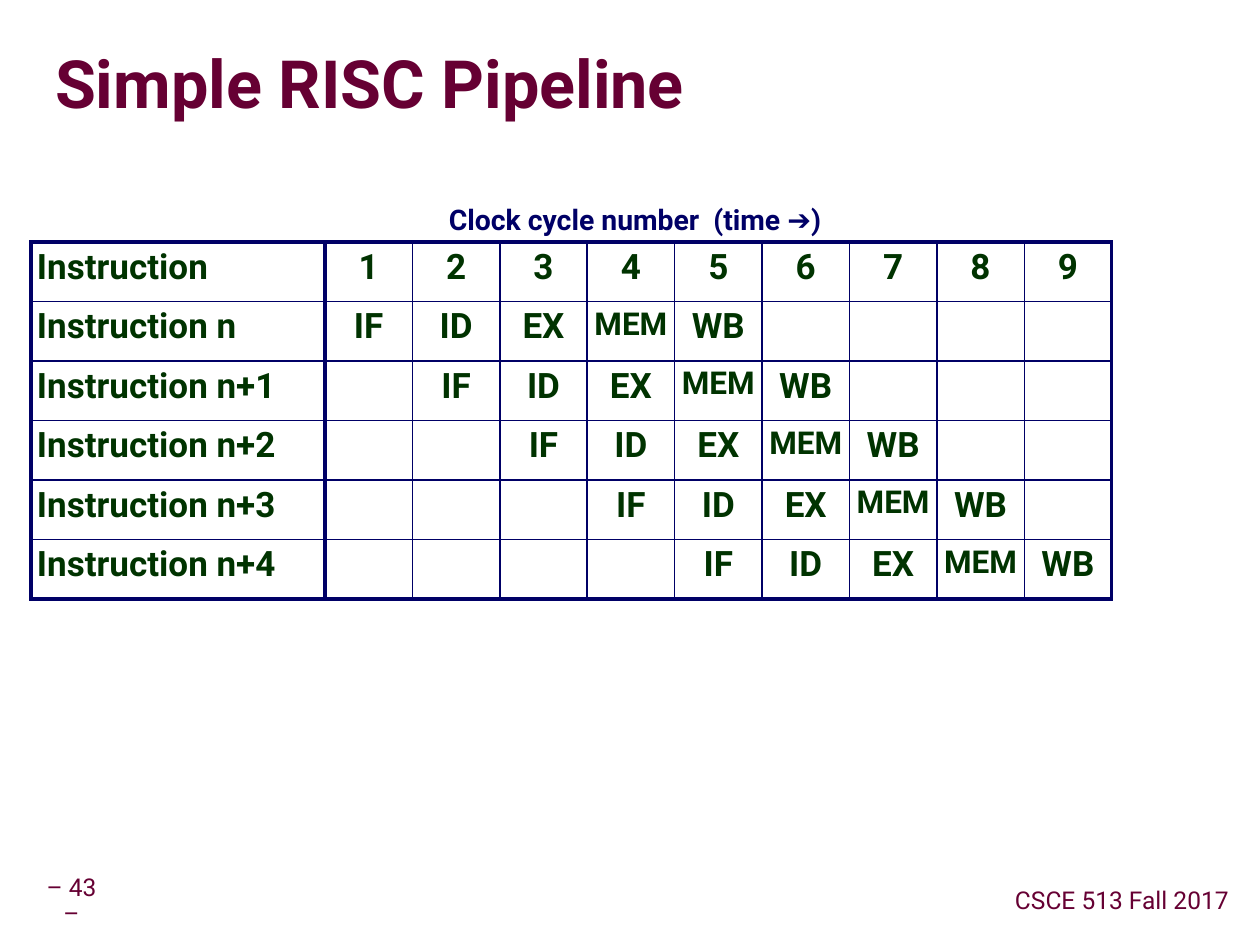
from lxml import etree
from pptx import Presentation
from pptx.dml.color import RGBColor
from pptx.enum.text import MSO_ANCHOR, MSO_AUTO_SIZE, PP_ALIGN
from pptx.oxml import parse_xml
from pptx.oxml.ns import nsdecls, qn
from pptx.util import Pt

LEFT, CENTER = PP_ALIGN.LEFT, PP_ALIGN.CENTER
TOP, MIDDLE = MSO_ANCHOR.TOP, MSO_ANCHOR.MIDDLE
GROW, FIXED = MSO_AUTO_SIZE.SHAPE_TO_FIT_TEXT, MSO_AUTO_SIZE.NONE

EMU_PER_PX = 914400 / 126
COLORS = {"plum": "660033", "navy": "000066", "green": "003300", "shadow": "969696"}
FONT = "Roboto"
INSET = 6
THIN, THICK = 1, 2.25

STAGES = ["IF", "ID", "EX", "MEM", "WB"]
CYCLES = 9
INSTRUCTIONS = ["Instruction n"] + [f"Instruction n+{i}" for i in range(1, 5)]


def px(length):
    return round(length * EMU_PER_PX)


class SlideBuilder:
    def __init__(self, deck):
        self.page = deck.slides.add_slide(deck.slide_layouts[5])

    def add_span(self, frame, text, size, color, align=LEFT, bold=False, spacing=0.9):
        para = frame.paragraphs[0]
        para.alignment, para.line_spacing = align, spacing
        para.space_before = Pt(0)
        span = para.add_run()
        span.text = text
        for name, value in {"name": FONT, "size": Pt(size), "bold": bold}.items():
            setattr(span.font, name, value)
        span.font.color.rgb = RGBColor.from_string(COLORS[color])
        return span

    def set_frame(self, target, inset, anchor):
        for side in ("left", "top", "right", "bottom"):
            setattr(target, f"margin_{side}", px(inset))
        target.vertical_anchor = anchor

    def title(self, text, left, top, width, height):
        box = self.page.shapes.title
        box.left, box.top, box.width, box.height = map(px, (left, top, width, height))
        self.set_frame(box.text_frame, 0, MIDDLE)
        box.text_frame.auto_size = FIXED
        span = self.add_span(box.text_frame, text, 38, "plum", bold=True, spacing=0.87)
        effects = parse_xml(
            f'<a:effectLst {nsdecls("a")}>'
            '<a:outerShdw dist="45000" dir="2700000" algn="tl">'
            f'<a:srgbClr val="{COLORS["shadow"]}"/></a:outerShdw></a:effectLst>')
        span._r.get_or_add_rPr().find(qn("a:solidFill")).addnext(effects)

    def text(self, text, area, size, color, anchor=MIDDLE, wrap=False,
             auto_size=FIXED, bold=False, baseline=0):
        box = self.page.shapes.add_textbox(*map(px, area))
        frame = box.text_frame
        frame.word_wrap, frame.auto_size = wrap, auto_size
        self.set_frame(frame, INSET, anchor)
        span = self.add_span(frame, text, size, color, CENTER, bold)
        if baseline:
            span._r.get_or_add_rPr().set("baseline", str(baseline * 1000))

    def border(self, cell, tag, width):
        line = etree.SubElement(cell._tc.get_or_add_tcPr(), qn(f"a:{tag}"), w=str(int(Pt(width))))
        fill = etree.SubElement(line, qn("a:solidFill"))
        etree.SubElement(fill, qn("a:srgbClr"), val=COLORS["navy"])

    def table(self, rows, area, align):
        row_count, column_count = len(rows), len(rows[0])
        table = self.page.shapes.add_table(row_count, column_count, *map(px, area)).table
        table.first_row = table.horz_banding = False
        for column in table.columns:
            column.width = px(area[2] / column_count)
        for row in table.rows:
            row.height = px(area[3] / row_count)
        for r, row in enumerate(rows):
            for c, text in enumerate(row):
                cell = table.cell(r, c)
                self.set_frame(cell, INSET, TOP)
                outer_edges = {"lnL": c == 0, "lnR": c == column_count - 1,
                               "lnT": r == 0, "lnB": r == row_count - 1}
                for tag, is_outer in outer_edges.items():
                    self.border(cell, tag, THICK if is_outer else THIN)
                cell.fill.background()
                if text:
                    size = 18 if text == "MEM" else 20
                    self.add_span(cell.text_frame, text, size, "green", align, True, 0.95)


def main():
    deck = Presentation()
    deck.slide_width, deck.slide_height = px(1260), px(945)
    slide = SlideBuilder(deck)

    # Footer
    slide.text("– 43 –", (30, 882, 83, 39), 14, "plum", wrap=True)
    slide.text("CSCE 513 Fall 2017", (1003, 882, 238, 39), 14, "plum")

    slide.title("Simple RISC Pipeline", 55, 34, 1201, 107)

    # Each instruction enters the pipeline one cycle after the one before
    schedule = [[str(cycle) for cycle in range(1, CYCLES + 1)]]
    for start in range(len(INSTRUCTIONS)):
        schedule.append([""] * start + STAGES + [""] * (CYCLES - start - len(STAGES)))
    slide.table(schedule, (325, 242, 787, 357), CENTER)

    # Row labels
    labels = [[label] for label in ["Instruction"] + INSTRUCTIONS]
    slide.table(labels, (31, 242, 294, 357), LEFT)

    # Heading over the cycle columns
    slide.text("Clock cycle number  (time ➔)", (442, 164, 386, 49), 28, "navy",
               anchor=TOP, auto_size=GROW, bold=True, baseline=-25)

    deck.save("out.pptx")


if __name__ == "__main__":
    main()
